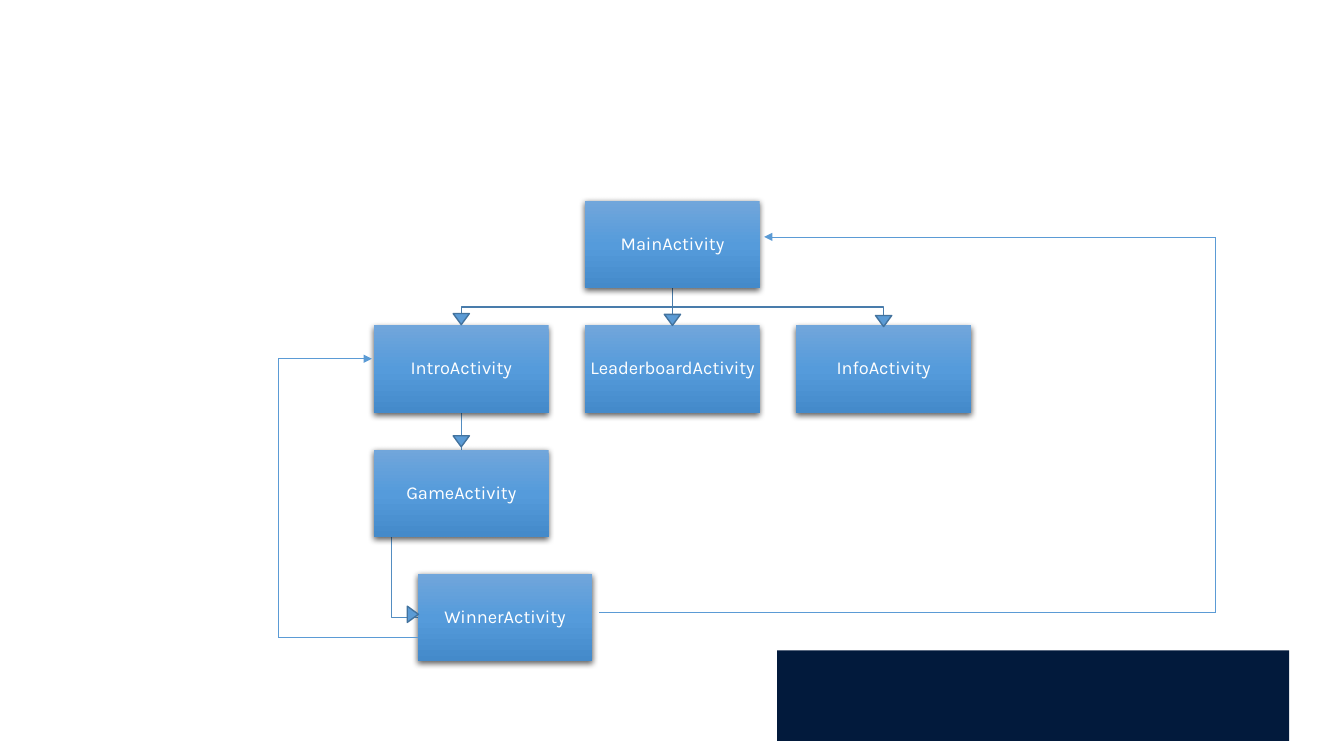
from dataclasses import dataclass
from copy import deepcopy
from itertools import pairwise

from lxml import etree
from pptx import Presentation
from pptx.dml.color import RGBColor
from pptx.enum.shapes import MSO_CONNECTOR, MSO_SHAPE
from pptx.enum.text import MSO_ANCHOR, PP_ALIGN
from pptx.oxml.ns import qn
from pptx.util import Cm, Inches, Pt

RECT, TRIANGLE = MSO_SHAPE.RECTANGLE, MSO_SHAPE.ISOSCELES_TRIANGLE
STRAIGHT = MSO_CONNECTOR.STRAIGHT
MIDDLE, CENTER = MSO_ANCHOR.MIDDLE, PP_ALIGN.CENTER
Point = tuple[float, float]


@dataclass(frozen=True)
class Theme:
    font: str = "Karla"
    label_size: float = 13
    label: str = "FFFFFF"
    box_stops: tuple = ((0, "71A6DB"), (0.5, "559BDB"), (1, "448ACA"))
    panel: str = "021A3C"
    accent: str = "5B9BD5"
    head_line: str = "43739E"
    top_link: str = "497CAB"
    lower_link: str = "538DC1"
    link_width: float = 1
    loop_width: float = 0.5


THEME = Theme()

# Grid of the tree, in centimetres
BOX_W, BOX_H = 4.4, 2.2
LEFT, TOP = 9.42, 5.07
COL_STEP, ROW_STEP = 5.32, 3.13
HEAD_W, HEAD_H = 0.41, 0.28


@dataclass(frozen=True)
class Box:
    name: str
    col: int
    row: int
    indent: float = 0

    @property
    def x(self) -> float:
        return LEFT + self.col * COL_STEP + self.indent

    @property
    def y(self) -> float:
        return TOP + self.row * ROW_STEP

    @property
    def mid(self) -> float:
        return self.x + BOX_W / 2

    @property
    def bottom(self) -> float:
        return self.y + BOX_H


@dataclass(frozen=True)
class Link:
    points: list[Point]
    color: str
    head: Point
    rotation: int = 180


MAIN = Box("MainActivity", 1, 0)
INTRO = Box("IntroActivity", 0, 1)
GAME = Box("GameActivity", 0, 2)
WINNER = Box("WinnerActivity", 0, 3, indent=1.1)
LEADERBOARD = Box("LeaderboardActivity", 1, 1)
INFO = Box("InfoActivity", 2, 1)
BOXES = [MAIN, INTRO, GAME, WINNER, LEADERBOARD, INFO]

# Loops back to earlier screens
LOOPS: list[list[Point]] = [
    [(15.09, 15.44), (30.61, 15.44), (30.61, 5.97), (19.25, 5.97)],
    [(10.54, 16.05), (7.01, 16.05), (7.01, 9.04), (9.37, 9.04)],
]


def link_down(src: Box, dst: Box, color: str, gap: float) -> Link:
    """Link from the foot of src to the top of dst, with a bend if needed."""
    start, end = (src.mid, src.bottom), (dst.mid, dst.y)
    bend_y = (src.bottom + dst.y) / 2
    bends = [] if src.col == dst.col else [(src.mid, bend_y), (dst.mid, bend_y)]
    return Link([start, *bends, end], color, (dst.mid, dst.y - gap))


def link_side(src: Box, dst: Box, color: str) -> Link:
    """Link from the foot of src to the left side of dst."""
    x, y = src.x + 0.44, dst.y + BOX_H / 2
    return Link([(x, src.bottom), (x, y), (dst.x, y)], color, (dst.x - 0.12, y - 0.08), 90)


LINKS = [
    link_down(MAIN, INFO, THEME.top_link, 0.11),
    link_down(MAIN, LEADERBOARD, THEME.top_link, 0.14),
    link_side(GAME, WINNER, THEME.lower_link),
    link_down(INTRO, GAME, THEME.lower_link, 0.21),
    link_down(MAIN, INTRO, THEME.top_link, 0.16),
]


def set_line(sp, color: str, width: float) -> None:
    sp.line.color.rgb = RGBColor.from_string(color)
    sp.line.width = Pt(width)


def add_block(shapes, kind, x: float, y: float, w: float, h: float, color: str):
    sp = shapes.add_shape(kind, Cm(x), Cm(y), Cm(w), Cm(h))
    sp.shadow.inherit = False
    sp.fill.solid()
    sp.fill.fore_color.rgb = RGBColor.from_string(color)
    sp.line.fill.background()
    return sp


def add_segment(shapes, start: Point, end: Point, color: str, width: float):
    line = shapes.add_connector(STRAIGHT, *map(Cm, start + end))
    set_line(line, color, width)
    etree.SubElement(line._element.spPr, qn("a:effectLst"))
    return line


def add_link(shapes, link: Link) -> None:
    if len(link.points) == 2:
        add_segment(shapes, *link.points, link.color, THEME.link_width)
        return
    start, *rest = [(Cm(x), Cm(y)) for x, y in link.points]
    builder = shapes.build_freeform(*start)
    builder.add_line_segments(rest, close=False)
    sp = builder.convert_to_shape()
    sp.shadow.inherit = False
    sp.fill.background()
    set_line(sp, link.color, THEME.link_width)


def add_head(shapes, link: Link) -> None:
    x, y = link.head
    sp = add_block(shapes, TRIANGLE, x - HEAD_W / 2, y - HEAD_H / 2,
                   HEAD_W, HEAD_H, THEME.accent)
    sp.rotation = link.rotation
    set_line(sp, THEME.head_line, THEME.link_width)


def add_loop(shapes, points: list[Point]) -> None:
    for start, end in pairwise(points):
        line = add_segment(shapes, start, end, THEME.accent, THEME.loop_width)
    etree.SubElement(line.line._get_or_add_ln(), qn("a:tailEnd"), type="triangle")


def set_gradient(sp) -> None:
    sp.fill.gradient()
    sp.fill.gradient_angle = 270
    stops = sp._element.spPr.find(".//" + qn("a:gsLst"))
    stops.append(deepcopy(stops[0]))
    for stop, (position, color) in zip(sp.fill.gradient_stops, THEME.box_stops):
        stop.position = position
        stop.color.rgb = RGBColor.from_string(color)


def set_shadow(sp) -> None:
    effects = sp._element.spPr.find(qn("a:effectLst"))
    shadow = etree.SubElement(effects, qn("a:outerShdw"), blurRad=str(Pt(4.5)),
                              dist=str(Pt(1.5)), dir="5400000", algn="ctr", rotWithShape="0")
    color = etree.SubElement(shadow, qn("a:srgbClr"), val="000000")
    etree.SubElement(color, qn("a:alpha"), val="63000")


def add_box(shapes, box: Box) -> None:
    sp = add_block(shapes, RECT, box.x, box.y, BOX_W, BOX_H, THEME.accent)
    set_gradient(sp)
    set_shadow(sp)
    tf = sp.text_frame
    frame = dict.fromkeys(("margin_left", "margin_top", "margin_right", "margin_bottom"), Cm(0.03))
    frame |= {"word_wrap": True, "vertical_anchor": MIDDLE}
    p = tf.paragraphs[0]
    r = p.add_run()
    r.text = box.name
    r.font.color.rgb = RGBColor.from_string(THEME.label)
    formats = [(tf, frame), (p, {"alignment": CENTER, "line_spacing": 0.9}),
               (r.font, {"name": THEME.font, "size": Pt(THEME.label_size)})]
    for target, values in formats:
        for key, value in values.items():
            setattr(target, key, value)


def main() -> None:
    prs = Presentation()
    prs.slide_width, prs.slide_height = Inches(13.33), Inches(7.5)
    shapes = prs.slides.add_slide(prs.slide_layouts[6]).shapes

    # Corner panel, then the tree, the loops and the arrowheads
    add_block(shapes, RECT, 19.58, 16.39, 12.9, 2.28, THEME.panel)
    for draw, items in ((add_link, LINKS), (add_box, BOXES), (add_loop, LOOPS), (add_head, LINKS)):
        for item in items:
            draw(shapes, item)
    prs.save("out.pptx")


if __name__ == "__main__":
    main()
